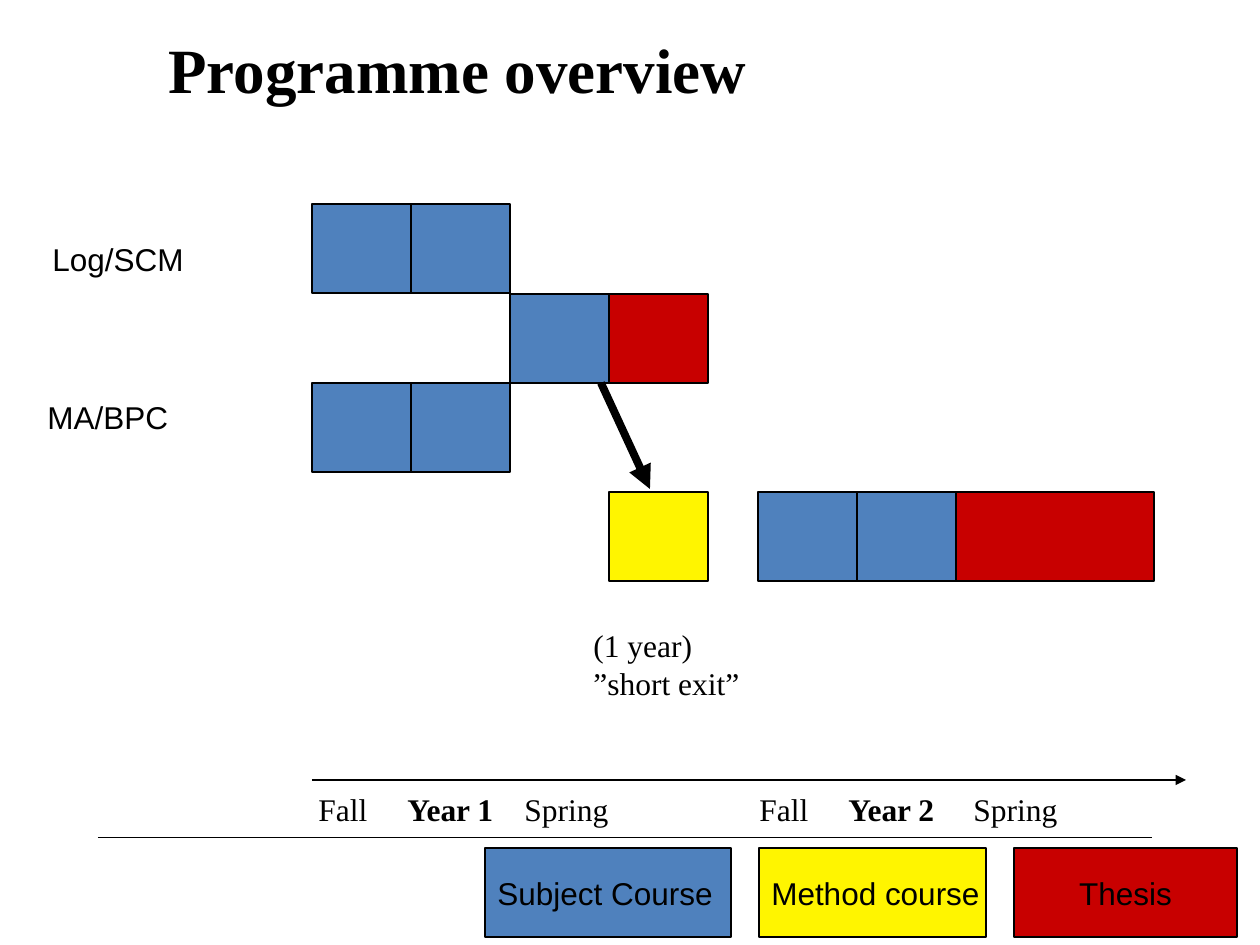
from pptx import Presentation
from pptx.dml.color import RGBColor
from pptx.enum.shapes import MSO_CONNECTOR, MSO_SHAPE
from pptx.enum.text import MSO_ANCHOR, PP_ALIGN
from pptx.oxml.ns import qn
from pptx.util import Pt
from lxml.etree import SubElement

PX = 914400 // 126
COLORS = {"black": "000000", "subject": "4F81BD", "method": "FFF500", "thesis": "C80000"}
CELL_WIDTH, CELL_HEIGHT = 99, 89

deck = Presentation()
deck.slide_width, deck.slide_height = 1260 * PX, 945 * PX
slide = deck.slides.add_slide(deck.slide_layouts[6])


def add_block(left, top, width, kind):
    block = slide.shapes.add_shape(
        MSO_SHAPE.RECTANGLE, left * PX, top * PX, width * PX, CELL_HEIGHT * PX
    )
    block.shadow.inherit = False
    block.fill.solid()
    block.fill.fore_color.rgb = RGBColor.from_string(COLORS[kind])
    block.line.color.rgb = RGBColor.from_string(COLORS["black"])
    block.line.width = Pt(1)
    return block


def format_text(shape, font, size, bold=False):
    for para in shape.text_frame.paragraphs:
        for span in para.runs:
            span.font.name = font
            span.font.size = Pt(size)
            span.font.bold = bold
            span.font.color.rgb = RGBColor.from_string(COLORS["black"])


blocks = [
    (312, 204, 1, "subject"),
    (411, 204, 1, "subject"),
    (510, 294, 1, "subject"),
    (609, 294, 1, "thesis"),
    (312, 383, 1, "subject"),
    (411, 383, 1, "subject"),
    (609, 492, 1, "method"),
    (758, 492, 1, "subject"),
    (857, 492, 1, "subject"),
    (956, 492, 2, "thesis"),
]
for left, top, cells, kind in blocks:
    add_block(left, top, cells * CELL_WIDTH, kind)

legend = [
    (485, 246, "subject", "Subject Course", PP_ALIGN.LEFT),
    (759, 227, "method", "Method course", PP_ALIGN.LEFT),
    (1014, 223, "thesis", "Thesis", PP_ALIGN.CENTER),
]
for left, width, kind, label, alignment in legend:
    block = add_block(left, 848, width, kind)
    block.text_frame.text = label
    block.text_frame.word_wrap = False
    block.text_frame.vertical_anchor = MSO_ANCHOR.MIDDLE
    block.text_frame.paragraphs[0].alignment = alignment
    format_text(block, "Arial", 18)

lines = [
    (98, 837, 1152, 837, 0.5, False),
    (312, 780, 1186, 780, 1, True),
    (601, 383, 650, 489, 4.5, True),
]
for left, top, right, bottom, weight, arrow in lines:
    line = slide.shapes.add_connector(
        MSO_CONNECTOR.STRAIGHT, left * PX, top * PX, right * PX, bottom * PX
    )
    line.line.color.rgb = RGBColor.from_string(COLORS["black"])
    line.line.width = Pt(weight)
    if arrow:
        SubElement(line.line._get_or_add_ln(), qn("a:tailEnd"), type="triangle")
    SubElement(line._element.spPr, qn("a:effectLst"))

texts = [
    (156, 24, 891, 89, "Programme overview", "Times New Roman", 36, True, True),
    (40, 234, 157, 50, "Log/SCM", "Arial", 18, False, False),
    (35, 392, 147, 50, "MA/BPC", "Arial", 18, False, False),
    (581, 620, 173, 88, "(1 year)\n”short exit”", "Times New Roman", 18, False, False),
]
for left, top, width, height, text, font, size, bold, wrap in texts:
    box = slide.shapes.add_textbox(left * PX, top * PX, width * PX, height * PX)
    box.text_frame.word_wrap = wrap
    box.text_frame.text = text
    format_text(box, font, size, bold)

timeline = slide.shapes.add_textbox(306 * PX, 784 * PX, 835 * PX, 50 * PX)
timeline.text_frame.word_wrap = True
para = timeline.text_frame.paragraphs[0]
tabs = SubElement(para._p.get_or_add_pPr(), qn("a:tabLst"))
for position in (89, 206, 441, 530, 655):
    SubElement(tabs, qn("a:tab"), pos=str(position * PX), algn="l")
for text in ("Fall\t", "Year 1", "\tSpring\tFall\t", "Year 2", "\tSpring"):
    para.add_run().text = text
format_text(timeline, "Times New Roman", 18)
for span in para.runs:
    span.font.bold = span.text.startswith("Year")

deck.save("out.pptx")
